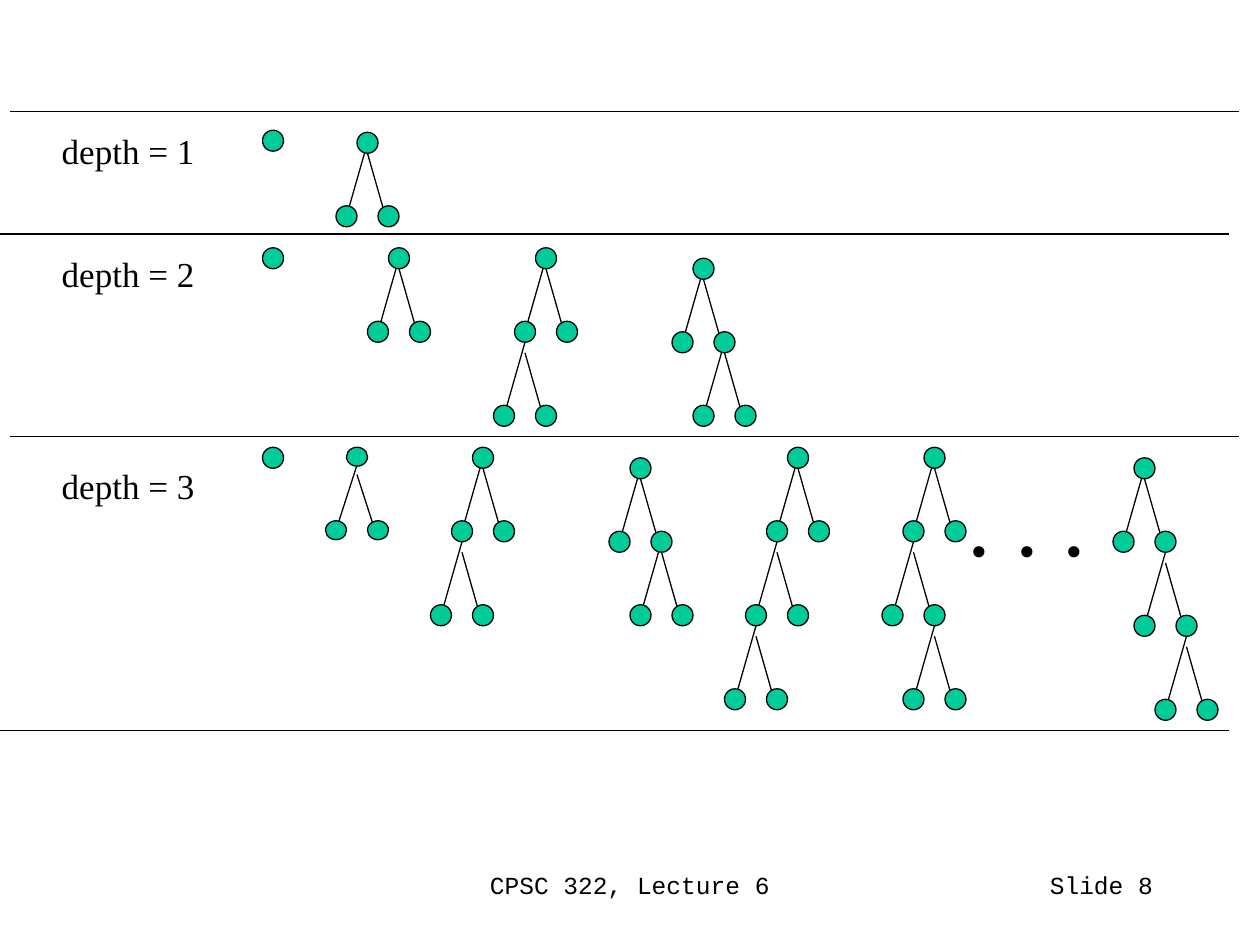
from dataclasses import dataclass
from typing import NamedTuple

from lxml import etree
from pptx import Presentation
from pptx.dml.color import RGBColor
from pptx.enum.shapes import MSO_CONNECTOR, MSO_SHAPE
from pptx.enum.text import MSO_ANCHOR, PP_ALIGN
from pptx.oxml.ns import qn
from pptx.slide import Slide
from pptx.util import Emu, Pt

PX = 7620
STRAIGHT = MSO_CONNECTOR.STRAIGHT
OVAL = MSO_SHAPE.OVAL
TOP = MSO_ANCHOR.TOP
LEFT, CENTER, RIGHT = PP_ALIGN.LEFT, PP_ALIGN.CENTER, PP_ALIGN.RIGHT
NODE_WIDTH = 20
BRANCH_SPREAD = 20
SIDES = {"L": -1, "R": 1}


@dataclass(frozen=True)
class Theme:
    ink: RGBColor = RGBColor(0x00, 0x00, 0x00)
    node: RGBColor = RGBColor(0x00, 0xCC, 0x99)
    stroke: float = 0.75
    serif: str = "Times New Roman"
    mono: str = "Courier New"
    label_size: int = 20
    footer_size: int = 14
    ellipsis_size: int = 54


THEME = Theme()


class Node(NamedTuple):
    x: int
    y: int
    height: int = 20


class Edge(NamedTuple):
    x1: int
    y1: int
    x2: int
    y2: int


class Tree(NamedTuple):
    x: int
    y: int
    turns: str = ""
    gap: int = 10
    root_gap: int = 0
    drop: int = 70
    lag: int = 10
    node_height: int = 20


class Line(NamedTuple):
    words: str
    space_before: float = 0


class Caption(NamedTuple):
    left: int
    top: int
    width: int
    height: int
    inset_top: int
    lines: tuple[Line, ...]
    font: str
    size: int
    align: PP_ALIGN = LEFT
    wrap: bool = True


DEPTH_RULES = (
    Edge(10, 106, 1180, 106),
    Edge(0, 223, 1170, 223),
    Edge(10, 416, 1180, 416),
    Edge(0, 696, 1170, 696),
)
LONE_ROOTS = [Node(260, y) for y in (134, 246, 436)]
TREES = (
    Tree(350, 136),
    Tree(380, 246),
    Tree(520, 246, "L"),
    Tree(670, 256, "R", gap=0),
    Tree(340, 435, root_gap=8, drop=62, lag=9, node_height=18),
    Tree(460, 436, "L"),
    Tree(610, 446, "R", gap=0),
    Tree(760, 436, "LL"),
    Tree(890, 436, "LR"),
    Tree(1090, 446, "RR"),
)
CAPTIONS = (
    Caption(410, 820, 380, 60, 9, (Line("CPSC 322, Lecture 6"),),
            THEME.mono, THEME.footer_size, CENTER),
    Caption(860, 820, 250, 60, 9, (Line("Slide 8"),),
            THEME.mono, THEME.footer_size, RIGHT),
    Caption(47, 94, 151, 392, 29,
            (Line("depth = 1"), Line("depth = 2", 46.7), Line("depth = 3", 97)),
            THEME.serif, THEME.label_size, wrap=False),
    Caption(910, 426, 137, 120, 14, (Line(". . ."),),
            THEME.serif, THEME.ellipsis_size, wrap=False),
)


def px(length: float) -> Emu:
    return Emu(round(length * PX))


def grow(tree: Tree) -> tuple[list[Edge], list[Node]]:
    edges: list[Edge] = []
    nodes = [Node(tree.x, tree.y, tree.node_height)]
    x, y = tree.x, tree.y + tree.root_gap
    for turn in (*tree.turns, ""):
        child_y = y + tree.drop
        edges.append(Edge(x, y + tree.lag, x + BRANCH_SPREAD, child_y + tree.lag))
        edges.append(Edge(x, y, x - BRANCH_SPREAD, child_y))
        for side in SIDES.values():
            nodes.append(Node(x + side * BRANCH_SPREAD, child_y, tree.node_height))
        if turn:
            x, y = x + SIDES[turn] * BRANCH_SPREAD, child_y + tree.gap
    return edges, nodes


def draw_edge(slide: Slide, edge: Edge) -> None:
    branch = slide.shapes.add_connector(STRAIGHT, *(px(value) for value in edge))
    branch.line.color.rgb = THEME.ink
    branch.line.width = Pt(THEME.stroke)
    etree.SubElement(branch._element.spPr, qn("a:effectLst"))


def draw_node(slide: Slide, node: Node) -> None:
    disc = slide.shapes.add_shape(
        OVAL, px(node.x - NODE_WIDTH / 2), px(node.y - node.height / 2),
        px(NODE_WIDTH), px(node.height))
    disc.shadow.inherit = False
    disc.fill.solid()
    disc.fill.fore_color.rgb = THEME.node
    disc.line.color.rgb = THEME.ink
    disc.line.width = Pt(THEME.stroke)


def draw_caption(slide: Slide, caption: Caption) -> None:
    frame = slide.shapes.add_textbox(
        px(caption.left), px(caption.top),
        px(caption.width), px(caption.height)).text_frame
    frame.word_wrap = caption.wrap
    frame.vertical_anchor = TOP
    frame.margin_top = px(caption.inset_top)
    for index, line in enumerate(caption.lines):
        paragraph = frame.add_paragraph() if index else frame.paragraphs[0]
        paragraph.alignment = caption.align
        paragraph.space_before = Pt(line.space_before)
        run = paragraph.add_run()
        run.text = line.words
        run.font.name = caption.font
        run.font.size = Pt(caption.size)
        run.font.color.rgb = THEME.ink


def main() -> None:
    deck = Presentation()
    deck.slide_width, deck.slide_height = px(1200), px(900)
    slide = deck.slides.add_slide(deck.slide_layouts[6])

    edges, nodes = list(DEPTH_RULES), list(LONE_ROOTS)
    for tree in TREES:
        tree_edges, tree_nodes = grow(tree)
        edges += tree_edges
        nodes += tree_nodes

    for caption in CAPTIONS:
        draw_caption(slide, caption)
    for edge in edges:
        draw_edge(slide, edge)
    for node in nodes:
        draw_node(slide, node)
    deck.save("out.pptx")


if __name__ == "__main__":
    main()
